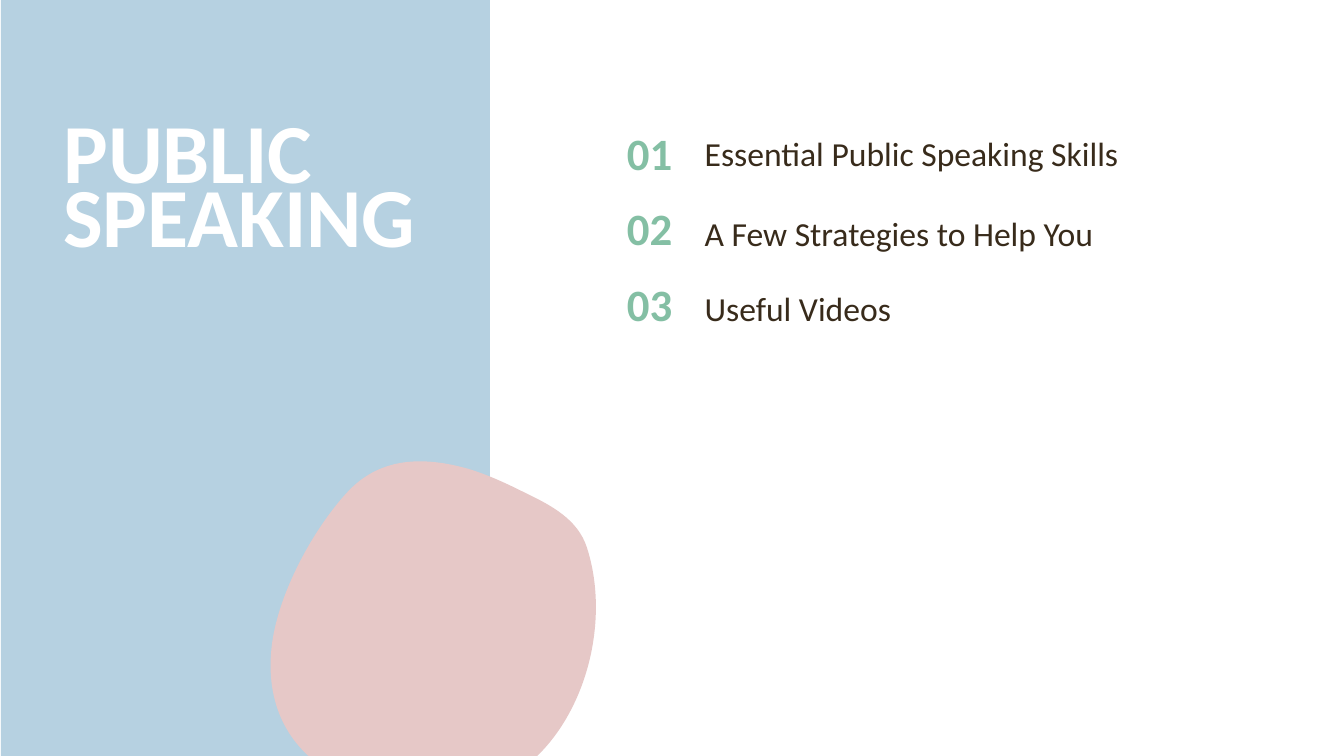
import dataclasses

import lxml.etree
import pptx
import pptx.dml.color
import pptx.enum.shapes
import pptx.enum.text
import pptx.oxml.ns
import pptx.shapes.autoshape
import pptx.slide
import pptx.util

RGBColor = pptx.dml.color.RGBColor
Inches = pptx.util.Inches
Point = tuple[float, float]

BLUE = RGBColor(0xB6, 0xD1, 0xE1)
PINK = RGBColor(0xE6, 0xC8, 0xC7)
GREEN = RGBColor(0x84, 0xBF, 0xA4)
BROWN = RGBColor(0x38, 0x2B, 0x1B)
WHITE = RGBColor(0xFF, 0xFF, 0xFF)

FONT = "Calibri"
TOP = 1.17
PITCH = 0.75


@dataclasses.dataclass(frozen=True)
class Style:
    size: float
    color: RGBColor
    bold: bool = False
    line: float | pptx.util.Length = 0.9
    after: float = 0
    anchor: pptx.enum.text.MSO_ANCHOR = pptx.enum.text.MSO_ANCHOR.MIDDLE


@dataclasses.dataclass(frozen=True)
class Topic:
    label: str
    style: Style


@dataclasses.dataclass(frozen=True)
class Curve:
    first: Point
    second: Point
    end: Point


TITLE = Style(60, WHITE, True, pptx.util.Pt(46), 0, pptx.enum.text.MSO_ANCHOR.TOP)
NUMBER = Style(32, GREEN, True)
LEAD = Style(24, BROWN)
LOOSE = Style(24, BROWN, line=1.07, after=8)

TOPICS = [
    Topic("Essential Public Speaking Skills", LEAD),
    Topic("A Few Strategies to Help You", LOOSE),
    Topic("Useful Videos", LOOSE),
]

CORNER: Point = (2.69, 4.58)
EXTENT: Point = (3.22, 3.32)
START: Point = (4.64, 4.65)
BLOB = [
    Curve((4.21, 4.53), (3.76, 4.52), (3.42, 4.91)),
    Curve((3.09, 5.28), (2.77, 5.88), (2.7, 6.37)),
    Curve((2.54, 7.53), (3.57, 8.03), (4.61, 7.87)),
    Curve((5.62, 7.71), (6.13, 6.38), (5.82, 5.43)),
    Curve((5.73, 5.15), (5.46, 5.01), (5.21, 4.89)),
    Curve((5.03, 4.8), (4.84, 4.71), START),
]


def paint(shape: pptx.shapes.autoshape.Shape, color: RGBColor) -> None:
    shape.fill.solid()
    shape.fill.fore_color.rgb = color
    shape.line.fill.background()
    shape.shadow.inherit = False


def write(slide: pptx.slide.Slide, text: str, left: float, top: float,
          width: float, height: float, style: Style) -> None:
    box = slide.shapes.add_textbox(
        Inches(left), Inches(top), Inches(width), Inches(height))
    frame = box.text_frame
    frame.word_wrap = True
    frame.vertical_anchor = style.anchor
    frame.text = text
    para = frame.paragraphs[0]
    para.line_spacing = style.line
    para.space_after = pptx.util.Pt(style.after)
    font = para.runs[0].font
    font.name = FONT
    font.size = pptx.util.Pt(style.size)
    font.bold = style.bold
    font.color.rgb = style.color


def add(root: lxml.etree.ElementBase, tag: str, points: list[Point]) -> None:
    node = lxml.etree.SubElement(root, pptx.oxml.ns.qn(tag))
    for x, y in points:
        dot = lxml.etree.SubElement(node, pptx.oxml.ns.qn("a:pt"))
        dot.set("x", str(Inches(x - CORNER[0])))
        dot.set("y", str(Inches(y - CORNER[1])))


def draw_blob(slide: pptx.slide.Slide) -> None:
    left, top = CORNER
    width, height = EXTENT
    pen = slide.shapes.build_freeform(Inches(left), Inches(top))
    pen.add_line_segments([(Inches(left + width), Inches(top + height))])
    shape = pen.convert_to_shape()
    route = next(shape.element.iter(pptx.oxml.ns.qn("a:path")))
    for child in list(route):
        route.remove(child)
    add(route, "a:moveTo", [START])
    for curve in BLOB:
        add(route, "a:cubicBezTo", [curve.first, curve.second, curve.end])
    add(route, "a:close", [])
    paint(shape, PINK)


def main() -> None:
    deck = pptx.Presentation()
    deck.slide_width = Inches(13.33)
    deck.slide_height = Inches(7.5)
    slide = deck.slides.add_slide(deck.slide_layouts[6])

    panel = slide.shapes.add_shape(
        pptx.enum.shapes.MSO_SHAPE.RECTANGLE,
        Inches(0.01), Inches(0), Inches(4.85), Inches(7.5))
    paint(panel, BLUE)

    write(slide, "PUBLIC SPEAKING", 0.53, 1.3, 5.33, 0.76, TITLE)
    draw_blob(slide)

    for index, topic in enumerate(TOPICS):
        top = TOP + index * PITCH
        write(slide, f"{index + 1:02}", 6.12, top, 0.77, 0.75, NUMBER)
        write(slide, topic.label, 6.89, top, 5.25, 0.75, topic.style)

    deck.save("out.pptx")


if __name__ == "__main__":
    main()
